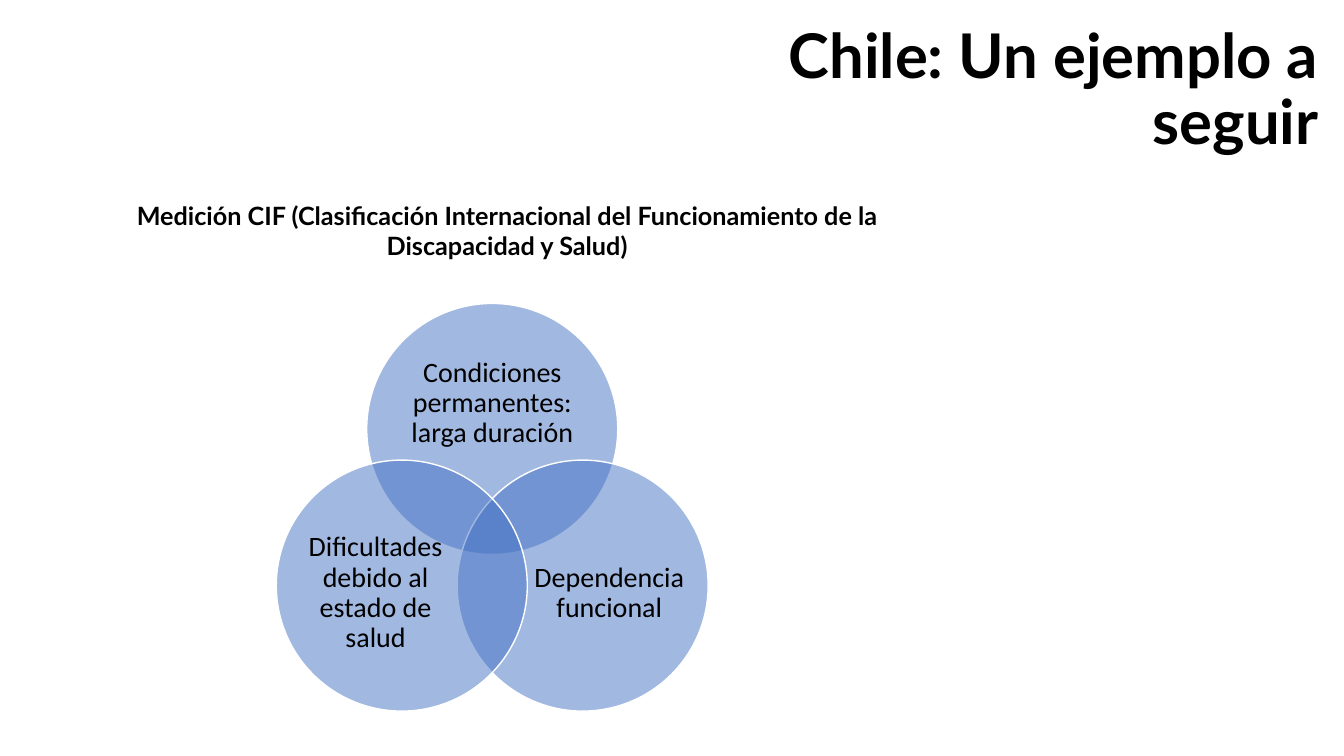
from math import cos, radians, sin

from lxml.etree import SubElement
from pptx import Presentation
from pptx.dml.color import RGBColor
from pptx.enum.shapes import MSO_SHAPE as Shape
from pptx.enum.text import MSO_ANCHOR as Anchor, PP_ALIGN as Align
from pptx.oxml.ns import qn
from pptx.util import Pt

BLACK = RGBColor(0x00, 0x00, 0x00)
BLUE = RGBColor(0x44, 0x72, 0xC4)
WHITE = RGBColor(0xFF, 0xFF, 0xFF)

CENTER_X, CENTER_Y = 351.6, 381
ORBIT = 74.6
DIAMETER = 179.3

CIRCLES = [
    (-90, "Condiciones permanentes: larga duración", (285.8, 247.7, 131.8, 80.6)),
    (30, "Dependencia funcional", (381.6, 374.4, 107.3, 98.6)),
    (150, "Dificultades debido al estado de salud", (214.6, 374.4, 107.3, 98.6)),
]


class SlideBuilder:
    def __init__(self, slide, color=BLACK):
        self.s = slide
        self.color = color

    def text(self, text, box, font="Lato", size=18, bold=False, align=Align.CENTER,
             anchor=Anchor.TOP, spacing=1.0, after=0, inset=None):
        sp = self.s.shapes.add_textbox(*map(Pt, box))
        tf = sp.text_frame
        tf.word_wrap = True
        tf.vertical_anchor = anchor
        if inset is not None:
            tf.margin_left = tf.margin_right = Pt(inset)
            tf.margin_top = tf.margin_bottom = Pt(inset)
        p = tf.paragraphs[0]
        p.alignment = align
        p.line_spacing = spacing
        p.space_after = Pt(after)
        r = p.add_run()
        r.text = text
        r.font.name = font
        r.font.size = Pt(size)
        r.font.bold = bold
        r.font.color.rgb = self.color
        return sp

    def circle(self, x, y, diameter, opacity=50):
        left, top = x - diameter / 2, y - diameter / 2
        sp = self.s.shapes.add_shape(Shape.OVAL, Pt(left), Pt(top), Pt(diameter), Pt(diameter))
        sp.shadow.inherit = False
        sp.fill.solid()
        sp.fill.fore_color.rgb = BLUE
        color = sp.fill._xPr.find(qn("a:solidFill")).find(qn("a:srgbClr"))
        SubElement(color, qn("a:alpha")).set("val", str(opacity * 1000))
        sp.line.color.rgb = WHITE
        sp.line.width = Pt(1)
        return sp


def main():
    prs = Presentation()
    prs.slide_width, prs.slide_height = Pt(960), Pt(540)
    builder = SlideBuilder(prs.slides.add_slide(prs.slide_layouts[6]))

    builder.text("Chile: Un ejemplo a seguir", (527, 13, 422, 104.4), size=44, bold=True,
                 align=Align.RIGHT, anchor=Anchor.MIDDLE, spacing=0.9)
    for angle, label, box in CIRCLES:
        a = radians(angle)
        builder.circle(CENTER_X + ORBIT * cos(a), CENTER_Y + ORBIT * sin(a), DIAMETER)
        builder.text(label, box, font="Calibri", size=20, anchor=Anchor.MIDDLE,
                     spacing=0.9, after=7, inset=0)
    builder.text("Medición CIF (Clasificación Internacional del Funcionamiento de la "
                 "Discapacidad y Salud)", (85, 139.7, 554.4, 51), bold=True)

    prs.save("out.pptx")


if __name__ == "__main__":
    main()
